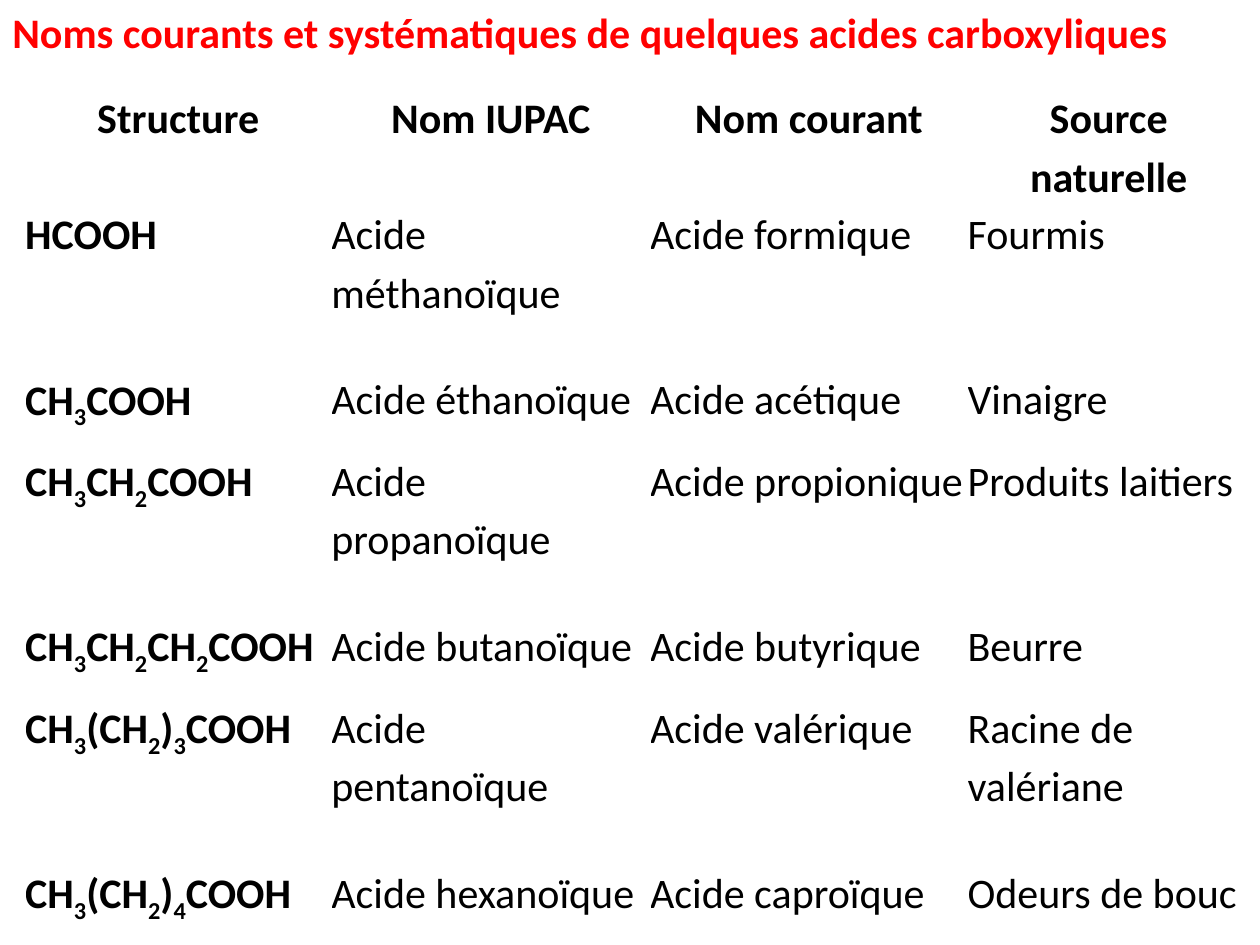
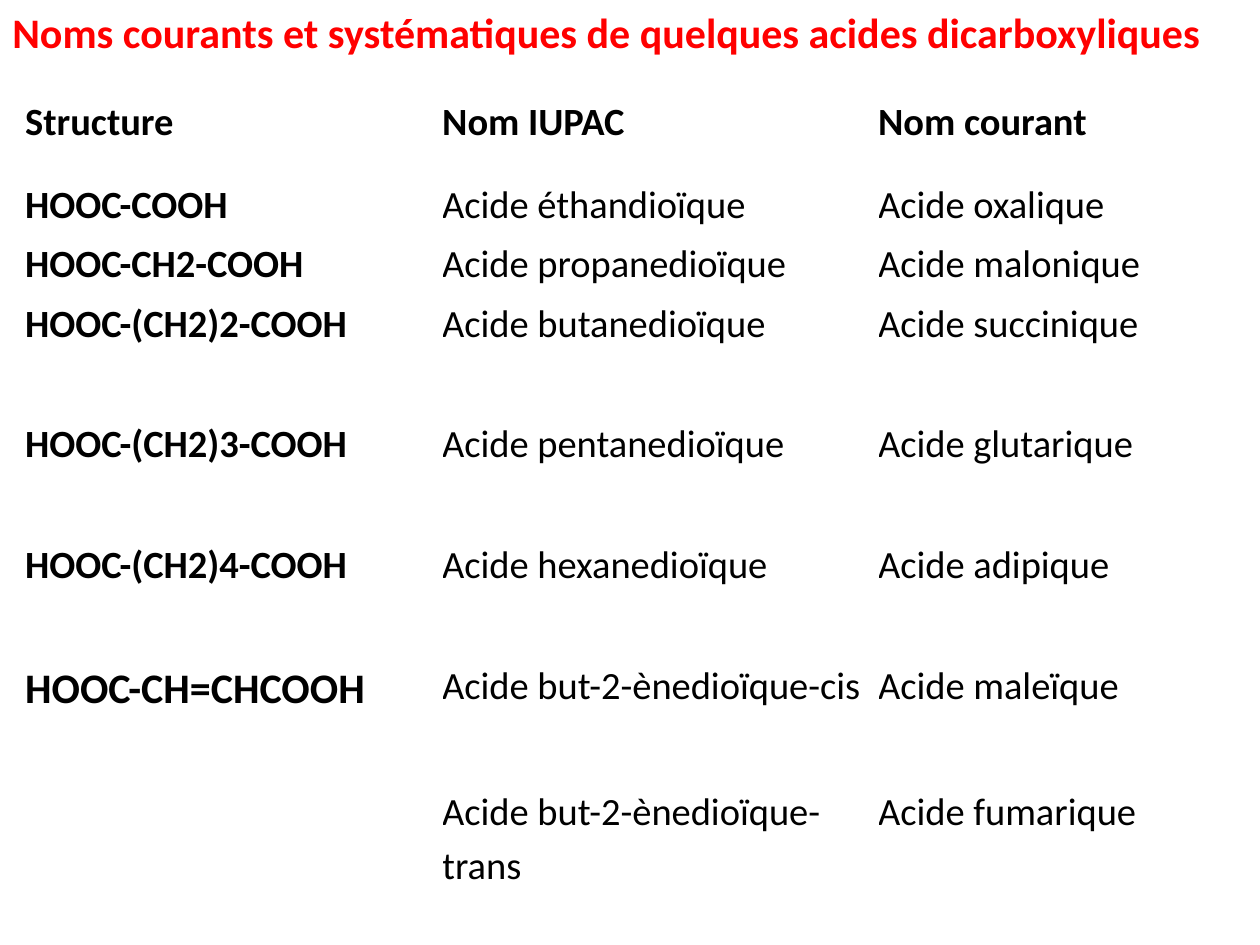
from itertools import groupby

from pptx import Presentation
from pptx.dml.color import RGBColor
from pptx.enum.text import MSO_AUTO_SIZE, PP_ALIGN
from pptx.util import Inches, Pt

RED = RGBColor(0xFF, 0x00, 0x00)
BLACK = RGBColor(0x00, 0x00, 0x00)
FONT = "Calibri"
TITLE_SIZE = 24
LINE_SPACING = 1.15
SECOND_NAME_GAP = 41  # points between two names in one cell

# The grid is 100 columns by 75 rows
GRID_COLUMNS, GRID_ROWS = 100, 75
TITLE_HEIGHT = 5
TABLE_LEFT = 2

HEADINGS = ["Structure", "Nom IUPAC", "Nom courant"]

MONOACIDS = [
    HEADINGS + ["Source naturelle"],
    ["HCOOH", "Acide méthanoïque", "Acide formique", "Fourmis"],
    ["CH3COOH", "Acide éthanoïque", "Acide acétique", "Vinaigre"],
    ["CH3CH2COOH", "Acide propanoïque", "Acide propionique", "Produits laitiers"],
    ["CH3CH2CH2COOH", "Acide butanoïque", "Acide butyrique", "Beurre"],
    ["CH3(CH2)3COOH", "Acide pentanoïque", "Acide valérique", "Racine de valériane"],
    ["CH3(CH2)4COOH", "Acide hexanoïque", "Acide caproïque", "Odeurs de bouc"],
]
# The last column is a narrow empty margin
DIACIDS = [
    HEADINGS + [""],
    ["HOOC-COOH", "Acide éthandioïque", "Acide oxalique", ""],
    ["HOOC-CH2-COOH", "Acide propanedioïque", "Acide malonique", ""],
    ["HOOC-(CH2)2-COOH", "Acide butanedioïque", "Acide succinique", ""],
    ["HOOC-(CH2)3-COOH", "Acide pentanedioïque", "Acide glutarique", ""],
    ["HOOC-(CH2)4-COOH", "Acide hexanedioïque", "Acide adipique", ""],
    ["HOOC-CH=CHCOOH", "Acide but-2-ènedioïque-cis\nAcide but-2-ènedioïque-trans",
     "Acide maleïque\nAcide fumarique", ""],
]


class AcidDeck:
    """Holds the shared style and the slide being filled."""

    def __init__(self):
        self.presentation = Presentation()
        self.presentation.slide_width = Inches(10)
        self.presentation.slide_height = Inches(7.5)
        self.slide = None

    def x(self, columns):
        return round(self.presentation.slide_width * columns / GRID_COLUMNS)

    def y(self, rows):
        return round(self.presentation.slide_height * rows / GRID_ROWS)

    def style(self, paragraph, size, color=BLACK, bold=False):
        font = paragraph.font
        font.name, font.size, font.bold = FONT, Pt(size), bold
        font.color.rgb = color

    def add_slide(self, title):
        blank = self.presentation.slide_layouts[6]
        self.slide = self.presentation.slides.add_slide(blank)
        self.title(title)

    def title(self, text):
        box = self.slide.shapes.add_textbox(0, 0, self.x(GRID_COLUMNS), self.y(TITLE_HEIGHT))
        frame = box.text_frame
        frame.word_wrap = True
        frame.auto_size = MSO_AUTO_SIZE.SHAPE_TO_FIT_TEXT
        frame.text = text
        self.style(frame.paragraphs[0], TITLE_SIZE, RED, bold=True)

    def formula(self, paragraph, text):
        """Write the digits of a formula as subscripts."""
        for is_index, letters in groupby(text, str.isdigit):
            run = paragraph.add_run()
            run.text = "".join(letters)
            if is_index:
                run._r.get_or_add_rPr().set("baseline", "-25000")

    def cell(self, cell, text, size, bold, centered, subscripts):
        cell.fill.background()
        cell.margin_left = cell.margin_right = cell.margin_top = cell.margin_bottom = 0
        frame = cell.text_frame
        for index, line in enumerate(text.split("\n")):
            paragraph = frame.add_paragraph() if index else frame.paragraphs[0]
            if subscripts:
                self.formula(paragraph, line)
            else:
                paragraph.text = line
            self.style(paragraph, size, bold=bold)
            paragraph.line_spacing = LINE_SPACING
            if index:
                paragraph.space_before = Pt(SECOND_NAME_GAP)
            if centered:
                paragraph.alignment = PP_ALIGN.CENTER

    def table(self, top, widths, heights, content, size,
              centered_header=False, subscripts=False, last_formula_size=None):
        table = self.slide.shapes.add_table(
            len(heights), len(widths), self.x(TABLE_LEFT), self.y(top),
            self.x(sum(widths)), self.y(sum(heights))).table
        table.first_row = table.horz_banding = False
        for column, width in zip(table.columns, widths):
            column.width = self.x(width)
        for row, height in zip(table.rows, heights):
            row.height = self.y(height)

        last_row = len(content) - 1
        for row, texts in enumerate(content):
            for column, text in enumerate(texts):
                is_header, is_formula = row == 0, column == 0
                is_last_formula = is_formula and row == last_row
                self.cell(
                    table.cell(row, column), text,
                    last_formula_size if is_last_formula and last_formula_size else size,
                    bold=is_header or is_formula,
                    centered=is_header and centered_header,
                    subscripts=is_formula and subscripts)


def main():
    deck = AcidDeck()

    # Carboxylic acids
    deck.add_slide("Noms courants et systématiques de quelques acides carboxyliques")
    deck.table(6.8, [24.3, 25.3, 25.2, 22.4], [6.5, 13.1] * 3 + [6.5],
               MONOACIDS, 24, centered_header=True, subscripts=True)

    # Dicarboxylic acids
    deck.add_slide("Noms courants et systématiques de quelques acides dicarboxyliques")
    deck.table(7.3, [33.1, 34.6, 27.6, 1.2], [6.6] + [4.7] * 2 + [9.6] * 3 + [17.7],
               DIACIDS, 22, last_formula_size=24)

    deck.presentation.save("out.pptx")


if __name__ == "__main__":
    main()
